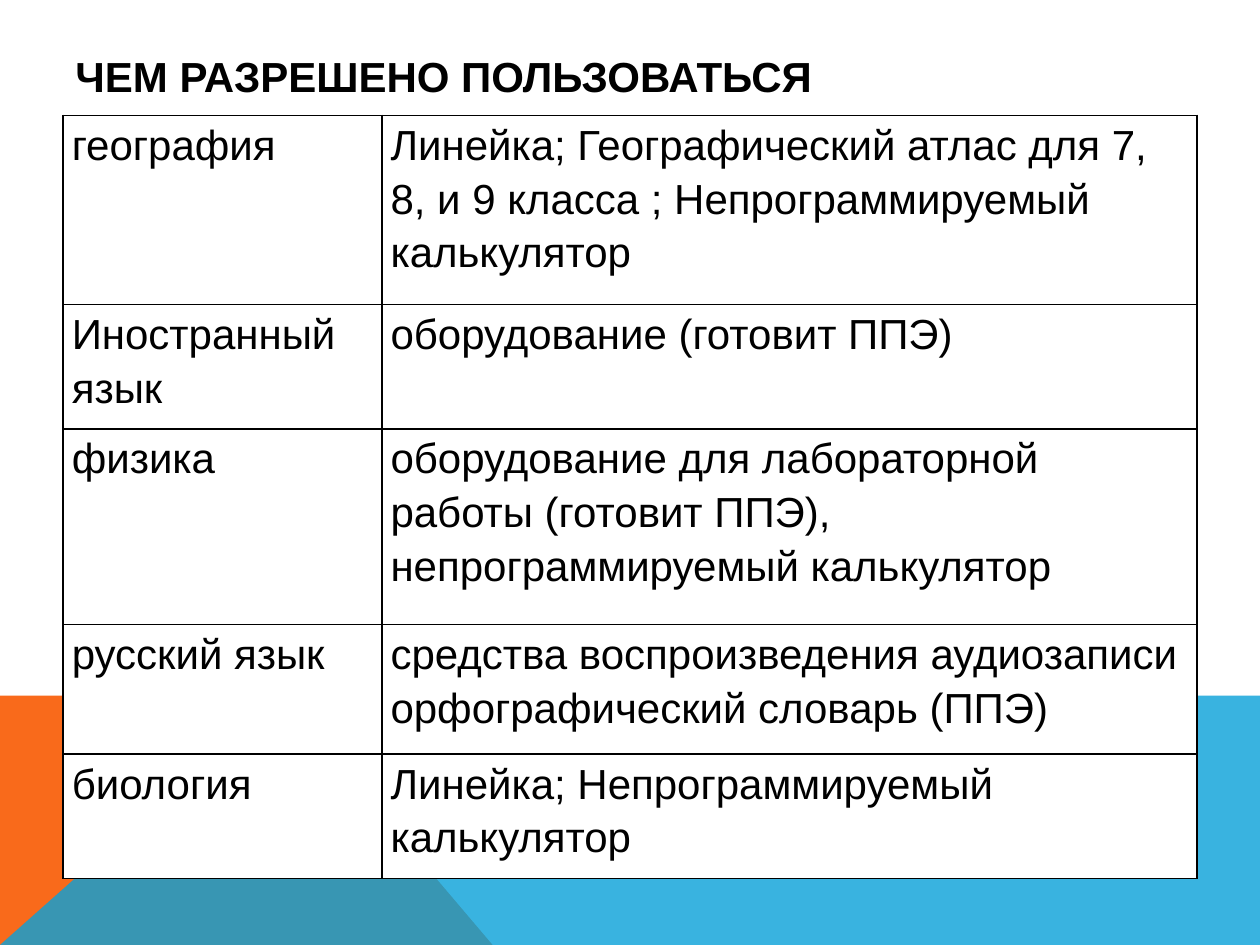
import dataclasses
import typing

import pptx
import pptx.dml.color
import pptx.enum.text
import pptx.oxml
import pptx.oxml.ns
import pptx.util

WIDTH = pptx.util.Inches(10)
HEIGHT = pptx.util.Inches(7.5)
LEFT, CONTENT_WIDTH = 0.05, 0.9
BAND_TOP, FOLD = 0.736, 0.223
COLUMN_SHARES = (0.253, 0.647)
BLACK, WHITE, ORANGE, BLUE = "000000", "FFFFFF", "F96A1B", "08A1D9"


@dataclasses.dataclass(frozen=True)
class Band:
    """A background outline with corners as shares of the slide."""

    corners: tuple[tuple[float, float], ...]
    color: str
    opacity: int = 100


@dataclasses.dataclass(frozen=True)
class Subject:
    """A table row: height share, subject name and permitted aids."""

    height: float
    name: str
    aids: tuple[str, ...]


BANDS = (
    Band(((0, 1), (0, BAND_TOP), (FOLD, BAND_TOP), (0.391, 1)), ORANGE),
    Band(((0, 1), (FOLD, BAND_TOP), (1, BAND_TOP), (1, 1)), BLUE, 80),
)
SUBJECTS = (
    Subject(0.2, "география", (
        "Линейка; Географический атлас для 7, 8, и 9 класса ; Непрограммируемый калькулятор",)),
    Subject(0.132, "Иностранный язык", ("оборудование (готовит ППЭ)",)),
    Subject(0.207, "физика", (
        "оборудование для лабораторной работы (готовит ППЭ),",
        "непрограммируемый калькулятор")),
    Subject(0.137, "русский язык", (
        "средства воспроизведения аудиозаписи",
        "орфографический словарь (ППЭ)")),
    Subject(0.132, "биология", ("Линейка; Непрограммируемый калькулятор",)),
)


def across(share: float) -> int:
    """Return a share of the slide width."""
    return round(WIDTH * share)


def down(share: float) -> int:
    """Return a share of the slide height."""
    return round(HEIGHT * share)


def rgb(color: str) -> pptx.dml.color.RGBColor:
    """Turn a hex string into a colour."""
    return pptx.dml.color.RGBColor.from_string(color)


def paint(target: typing.Any, color: str) -> None:
    """Give a shape or cell a solid fill."""
    target.fill.solid()
    target.fill.fore_color.rgb = rgb(color)


def write(frame: typing.Any, *lines: str, size: float = 24, bold: bool = False,
          color: str = BLACK, spacing: float = 1.0) -> None:
    """Write one paragraph per line with a shared format."""
    frame.word_wrap = True
    for index, line in enumerate(lines):
        paragraph = frame.add_paragraph() if index else frame.paragraphs[0]
        paragraph.line_spacing = spacing
        run = paragraph.add_run()
        run.text = line
        run.font.name = "Arial"
        run.font.size = pptx.util.Pt(size)
        run.font.bold = bold
        run.font.color.rgb = rgb(color)


def draw_band(slide: typing.Any, band: Band) -> None:
    """Draw one background band."""
    points = [(across(x), down(y)) for x, y in band.corners]
    builder = slide.shapes.build_freeform(*points[0])
    builder.add_line_segments(points[1:], close=True)
    shape = builder.convert_to_shape()
    shape.shadow.inherit = False
    shape.line.fill.background()
    paint(shape, band.color)
    if band.opacity < 100:
        color = next(shape.element.spPr.iter(pptx.oxml.ns.qn("a:srgbClr")))
        alpha = pptx.oxml.parse_xml(
            f'<a:alpha {pptx.oxml.ns.nsdecls("a")} val="{band.opacity * 1000}"/>')
        color.append(alpha)


def draw_title(slide: typing.Any, text: str) -> None:
    """Draw the slide heading."""
    shape = slide.shapes.add_textbox(
        across(LEFT), down(0.04), across(CONTENT_WIDTH), down(0.081))
    shape.text_frame.vertical_anchor = pptx.enum.text.MSO_ANCHOR.MIDDLE
    write(shape.text_frame, text, bold=True)


def outline(cell: typing.Any, color: str) -> None:
    """Put a one-point border on every side of a cell."""
    properties = cell._tc.get_or_add_tcPr()
    for index, side in enumerate(("lnL", "lnR", "lnT", "lnB")):
        border = pptx.oxml.parse_xml(
            f'<a:{side} {pptx.oxml.ns.nsdecls("a")} w="{pptx.util.Pt(1)}">'
            f'<a:solidFill><a:srgbClr val="{color}"/></a:solidFill></a:{side}>')
        properties.insert(index, border)


def fill_cell(cell: typing.Any, lines: tuple[str, ...]) -> None:
    """Format a cell and write its lines."""
    cell.margin_left = cell.margin_right = pptx.util.Inches(0.07)
    cell.margin_top = cell.margin_bottom = 0
    paint(cell, WHITE)
    outline(cell, BLACK)
    write(cell.text_frame, *lines, spacing=1.15)


def draw_table(slide: typing.Any, subjects: tuple[Subject, ...]) -> None:
    """Draw the table of subjects and permitted aids."""
    height = sum(subject.height for subject in subjects)
    table = slide.shapes.add_table(
        len(subjects), len(COLUMN_SHARES), across(LEFT), down(0.122),
        across(CONTENT_WIDTH), down(height)).table
    table.first_row = table.horz_banding = False
    for column, share in zip(table.columns, COLUMN_SHARES):
        column.width = across(share)
    for row, subject in zip(table.rows, subjects):
        row.height = down(subject.height)
        for cell, lines in zip(row.cells, ((subject.name,), subject.aids)):
            fill_cell(cell, lines)


def main() -> None:
    """Build and save the presentation."""
    presentation = pptx.Presentation()
    presentation.slide_width, presentation.slide_height = WIDTH, HEIGHT
    slide = presentation.slides.add_slide(presentation.slide_layouts[6])
    paint(slide.background, WHITE)
    for band in BANDS:
        draw_band(slide, band)
    draw_title(slide, "ЧЕМ РАЗРЕШЕНО ПОЛЬЗОВАТЬСЯ")
    draw_table(slide, SUBJECTS)
    presentation.save("out.pptx")


if __name__ == "__main__":
    main()
